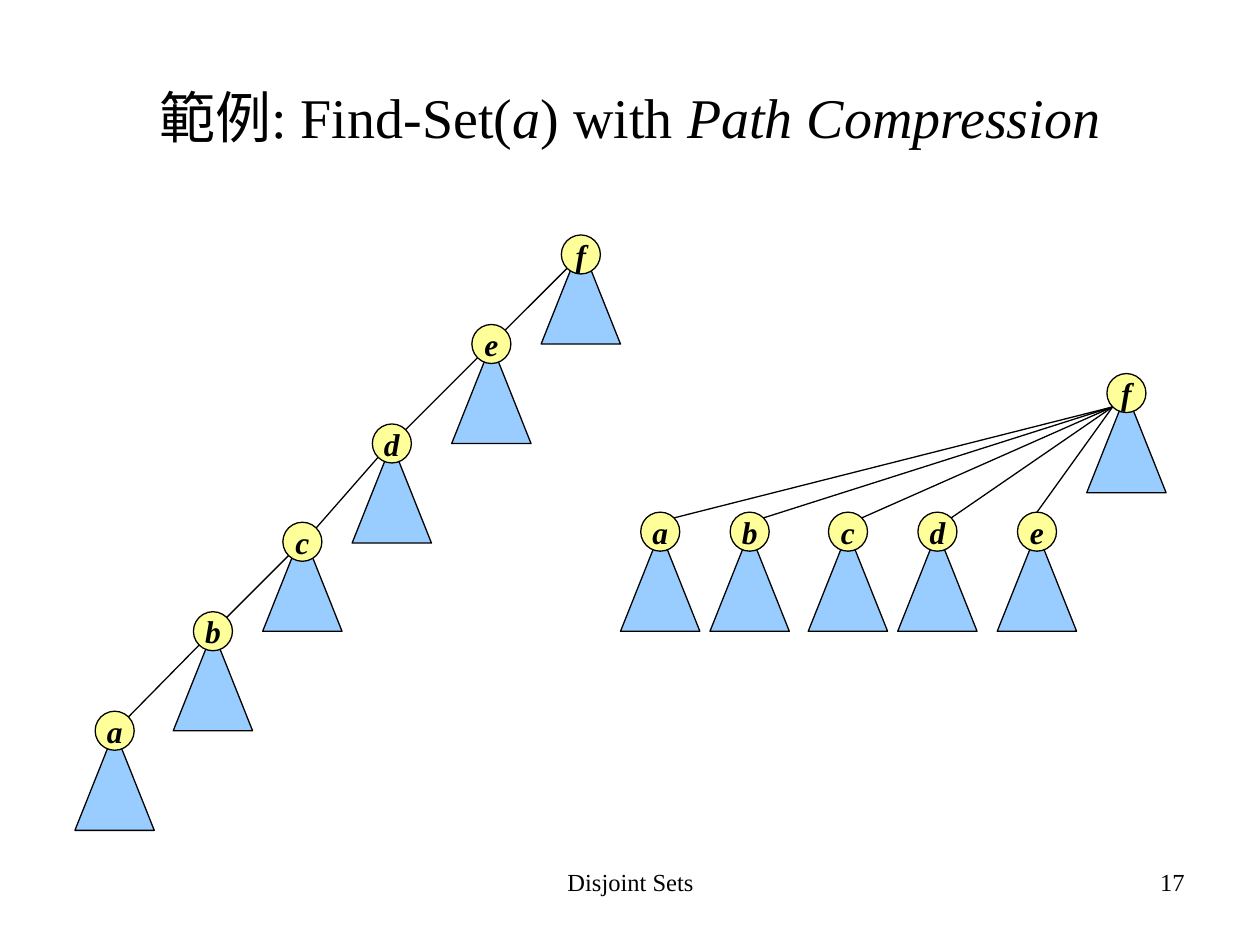
"""Build the slide on Find-Set with path compression: the chain before, the flat tree after."""
from math import sqrt

from lxml.etree import SubElement
from pptx import Presentation
from pptx.dml.color import RGBColor
from pptx.enum.shapes import MSO_CONNECTOR, MSO_SHAPE
from pptx.enum.text import MSO_ANCHOR, PP_ALIGN
from pptx.oxml.ns import qn
from pptx.util import Inches, Pt

THEME = {
    "ink": RGBColor(0x00, 0x00, 0x00),
    "node": RGBColor(0xFF, 0xFF, 0x99),
    "subtree": RGBColor(0x99, 0xCC, 0xFF),
    "line": Pt(0.75),
    "title": {"name": "Times New Roman", "size": Pt(32)},
    "footer": {"name": "Times New Roman", "size": Pt(14)},
    "label": {"name": "Times New Roman", "size": Pt(18), "bold": True, "italic": True},
}
NODE = 0.31
SUBTREE_WIDTH, SUBTREE_HEIGHT = 0.63, 0.79
DIAGONAL = NODE / 2 / sqrt(2)


def write(paragraph, text, style, **extra):
    run = paragraph.add_run()
    run.text = text
    for name, value in {**THEME[style], **extra}.items():
        setattr(run.font, name, value)
    run.font.color.rgb = THEME["ink"]


def add_part(kind, left, top, width, height, fill):
    part = slide.shapes.add_shape(kind, Inches(left), Inches(top), Inches(width), Inches(height))
    part.shadow.inherit = False
    part.fill.solid()
    part.fill.fore_color.rgb = THEME[fill]
    part.line.color.rgb = THEME["ink"]
    part.line.width = THEME["line"]
    return part


presentation = Presentation()
presentation.slide_width, presentation.slide_height = Inches(10), Inches(7.5)
slide = presentation.slides.add_slide(presentation.slide_layouts[5])

title = slide.shapes.title
title.left, title.top, title.width, title.height = map(Inches, (0.5, 0.3, 9, 1.25))
title.text_frame.vertical_anchor = MSO_ANCHOR.MIDDLE
heading = title.text_frame.paragraphs[0]
heading.alignment = PP_ALIGN.CENTER
for words, italic in [
    ("範例: Find-Set(", False),
    ("a", True),
    (") with ", False),
    ("Path Compression", True),
]:
    write(heading, words, "title", italic=italic)

for words, left, width, alignment in [
    ("Disjoint Sets", 3.42, 3.17, PP_ALIGN.CENTER),
    ("17", 7.17, 2.33, PP_ALIGN.RIGHT),
]:
    footer = slide.shapes.add_textbox(Inches(left), Inches(6.83), Inches(width), Inches(0.52))
    footer.text_frame.word_wrap = True
    footer.text_frame.paragraphs[0].alignment = alignment
    write(footer.text_frame.paragraphs[0], words, "footer")

chain = {
    "a": (0.91, 5.8, 5.8),
    "b": (1.69, 5.01, 5.01),
    "c": (2.4, 4.3, 4.22),
    "d": (3.11, 3.52, 3.52),
    "e": (3.9, 2.73, 2.73),
    "f": (4.61, 2.02, 1.94),
}
flat = {
    "a": (5.24, 4.22, 4.22),
    "b": (5.95, 4.22, 4.22),
    "c": (6.73, 4.22, 4.22),
    "d": (7.44, 4.22, 4.22),
    "e": (8.23, 4.22, 4.22),
    "f": (8.94, 3.12, 3.12),
}
chain_parents = dict(zip("abcde", "bcdef"))
flat_parents = dict.fromkeys("abcde", "f")

for tree, parents in [(chain, chain_parents), (flat, flat_parents)]:
    for letter, (x, y, apex) in tree.items():
        add_part(
            MSO_SHAPE.ISOSCELES_TRIANGLE,
            x - SUBTREE_WIDTH / 2, apex, SUBTREE_WIDTH, SUBTREE_HEIGHT, "subtree",
        )
        node = add_part(MSO_SHAPE.OVAL, x - NODE / 2, y - NODE / 2, NODE, NODE, "node")
        node.text_frame.word_wrap = False
        node.text_frame.vertical_anchor = MSO_ANCHOR.MIDDLE
        node.text_frame.paragraphs[0].alignment = PP_ALIGN.CENTER
        write(node.text_frame.paragraphs[0], letter, "label")

    for child, parent in parents.items():
        (x, y, _), (parent_x, parent_y, _) = tree[child], tree[parent]
        start = (x + DIAGONAL, y - DIAGONAL)
        if tree is flat and child == "e":
            start = (x, y - NODE / 2)
        end = (parent_x - DIAGONAL, parent_y + DIAGONAL)
        edge = slide.shapes.add_connector(MSO_CONNECTOR.STRAIGHT, *map(Inches, start + end))
        edge.line.color.rgb = THEME["ink"]
        edge.line.width = THEME["line"]
        SubElement(edge._element.spPr, qn("a:effectLst"))

presentation.save("out.pptx")
